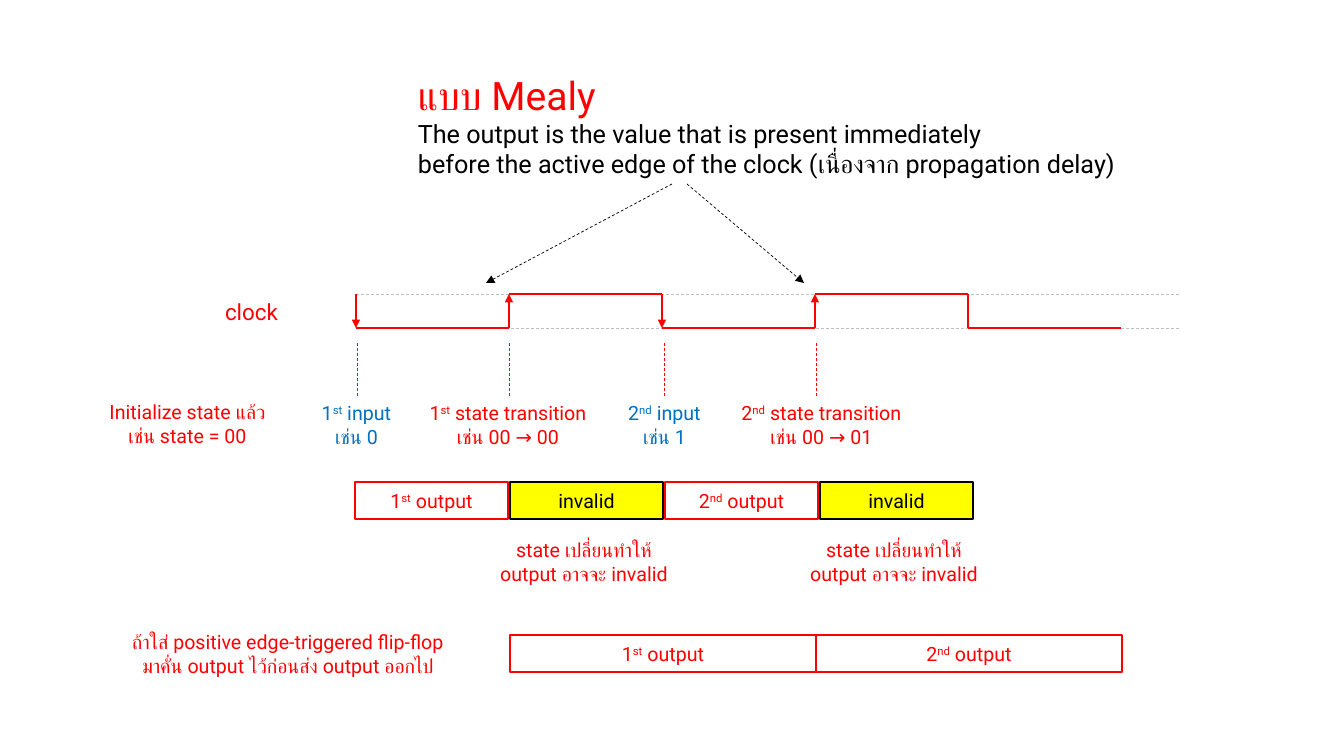
from lxml.etree import SubElement
from pptx import Presentation
from pptx.dml.color import RGBColor
from pptx.enum.dml import MSO_LINE
from pptx.enum.shapes import MSO_CONNECTOR, MSO_SHAPE
from pptx.enum.text import MSO_ANCHOR, PP_ALIGN
from pptx.oxml.ns import qn
from pptx.util import Emu, Pt

RED = RGBColor(0xFF, 0x00, 0x00)
BLUE = RGBColor(0x00, 0x70, 0xC0)
BLACK = RGBColor(0x00, 0x00, 0x00)
YELLOW = RGBColor(0xFF, 0xFF, 0x00)
GRAY = RGBColor(0xBF, 0xBF, 0xBF)
FONT = "Roboto"


def px(n):
    return Emu(round(n * 914400 / 100.8))


def write(tf, text, size=14, color=RED, align=PP_ALIGN.CENTER):
    """Append text to the first paragraph; ^st^ marks a superscript."""
    p = tf.paragraphs[0]
    p.alignment = align
    for row, line in enumerate(text.split("\n")):
        if row:
            p.add_line_break()
        for i, part in enumerate(line.split("^")):
            if not part:
                continue
            r = p.add_run()
            r.text = part
            r.font.size = Pt(size)
            r.font.name = FONT
            r.font.color.rgb = color
            if i % 2:
                r.font._element.set("baseline", "30000")


def add_label(s, box, text, **fmt):
    tf = s.shapes.add_textbox(*map(px, box)).text_frame
    tf.word_wrap = True
    write(tf, text, **fmt)
    return tf


def add_line(s, start, end, color=RED, width=1.5, dashed=False, arrow=False):
    c = s.shapes.add_connector(MSO_CONNECTOR.STRAIGHT, *map(px, start + end))
    c.line.color.rgb = color
    c.line.width = Pt(width)
    if dashed:
        c.line.dash_style = MSO_LINE.DASH
    sp_pr = c._element.spPr
    if arrow:
        SubElement(sp_pr.find(qn("a:ln")), qn("a:tailEnd"), type="triangle")
    SubElement(sp_pr, qn("a:effectLst"))


def add_cell(s, box, text, fill=None, color=RED):
    sp = s.shapes.add_shape(MSO_SHAPE.RECTANGLE, *map(px, box))
    sp.shadow.inherit = False
    if fill is None:
        sp.fill.background()
    else:
        sp.fill.solid()
        sp.fill.fore_color.rgb = fill
    sp.line.color.rgb = color
    sp.line.width = Pt(1.5)
    sp.text_frame.vertical_anchor = MSO_ANCHOR.MIDDLE
    write(sp.text_frame, text, color=color)


def add_heading(s, x, y, w, h):
    left = PP_ALIGN.LEFT
    tf = add_label(s, (x, y, w, h), "แบบ Mealy\n", size=28, align=left)
    write(tf, "The output is the value that is present immediately\n"
              "before the active edge of the clock (เนื่องจาก propagation delay)",
          size=18, color=BLACK, align=left)
    for start, end in ((264, 78), (279, 396)):
        add_line(s, (x + start, y + h - 1), (x + end, y + h + 98),
                 BLACK, 0.5, dashed=True, arrow=True)


def add_clock(s, x, y, w, h, half):
    """Clock wave from x to x + w, whose level changes every half period."""
    high, low = y, y + h
    for level in (high, low):
        add_line(s, (x, level), (x + w, level), GRAY, 0.5, dashed=True)
    add_label(s, (x - 196, y - 1, 183, 37), "clock", size=16)
    for i in range(5):
        edge = x + i * half
        before, after = (low, high) if i % 2 else (high, low)
        add_line(s, (edge, before), (edge, after), arrow=i < 4)
        add_line(s, (edge, after), (edge + half, after))


def add_events(s, x, y):
    """Captions below the clock, each with a dashed tick above it."""
    add_label(s, (x - 281, y - 1, 223, 57), "Initialize state แล้ว\nเช่น state = 00")
    events = (
        (0, -59, 117, "1^st^ input\nเช่น 0", BLUE),
        (152, 58, 186, "1^st^ state transition\nเช่น 00 → 00", RED),
        (307, 249, 117, "2^nd^ input\nเช่น 1", BLUE),
        (459, 366, 197, "2^nd^ state transition\nเช่น 00 → 01", RED),
    )
    for tick, left, w, text, color in events:
        add_line(s, (x + tick, y - 53), (x + tick, y), width=0.5, dashed=True)
        add_label(s, (x + left, y, w, 57), text, color=color)


def add_outputs(s, x, y, w, h, step):
    """Output row in which every second cell is invalid."""
    for i, text in enumerate(("1^st^ output", "invalid", "2^nd^ output", "invalid")):
        left = x + i * step
        if i % 2:
            add_cell(s, (left, y, w, h), text, YELLOW, BLACK)
            add_label(s, (left - 31, y + 51, 210, 57),
                      "state เปลี่ยนทำให้\noutput อาจจะ invalid")
        else:
            add_cell(s, (left, y, w, h), text)


def add_registered_outputs(s, x, y, w, h):
    add_label(s, (x - 413, y - 10, 382, 57),
              "ถ้าใส่ positive edge-triggered flip-flop\n"
              "มาคั่น output ไว้ก่อนส่ง output ออกไป")
    for i, text in enumerate(("1^st^ output", "2^nd^ output")):
        add_cell(s, (x + i * w, y, w, h), text)


def main():
    prs = Presentation()
    prs.slide_width, prs.slide_height = px(1344), px(756)
    s = prs.slides.add_slide(prs.slide_layouts[6])
    add_clock(s, 356, 294, 823, 34, half=153)
    add_events(s, 357, 396)
    add_outputs(s, 355, 482, 153, 37, step=155)
    add_registered_outputs(s, 510, 635, 306, 37)
    add_heading(s, 408, 66, 783, 119)
    prs.save("out.pptx")


if __name__ == "__main__":
    main()
